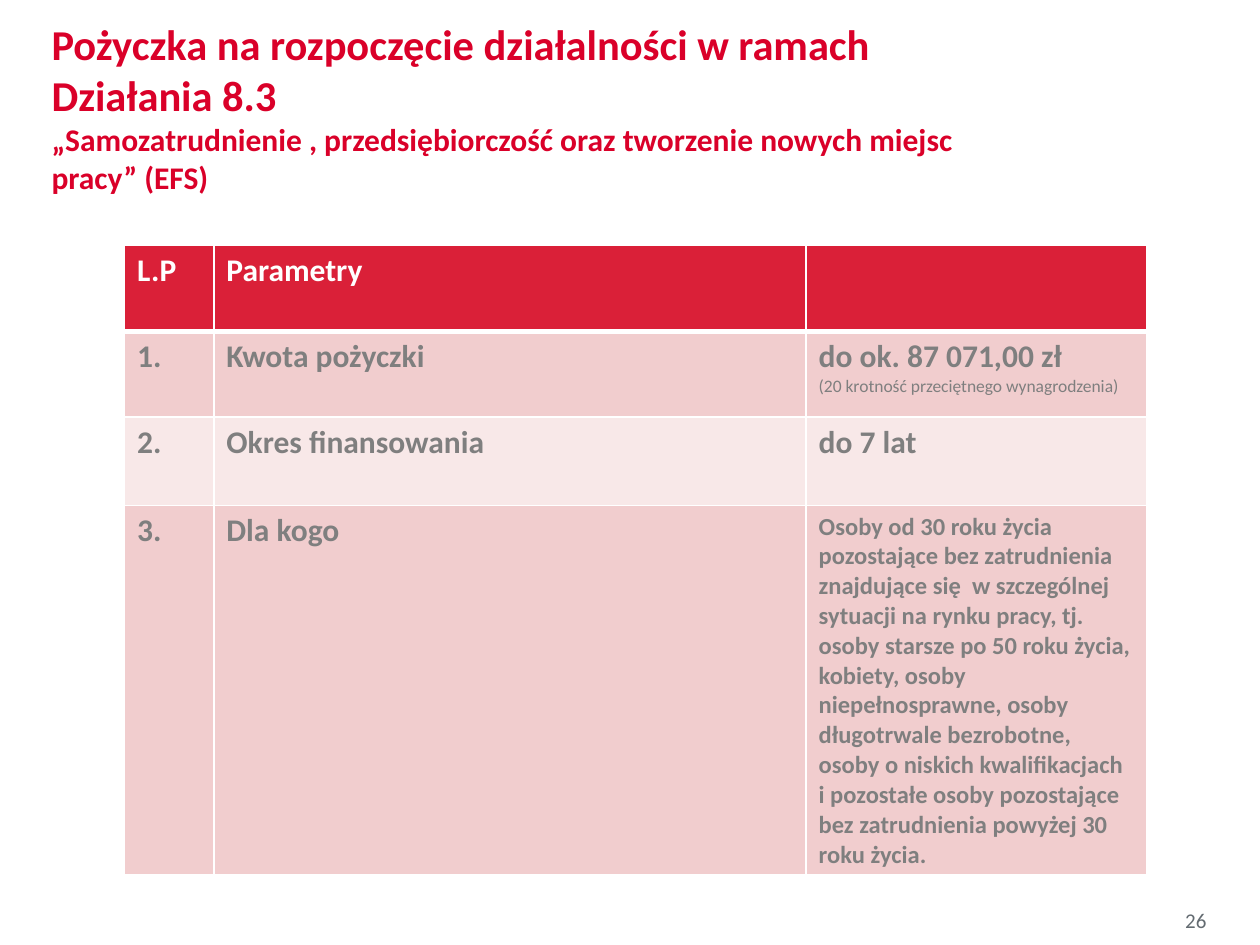
from dataclasses import dataclass

from lxml.etree import SubElement
from pptx import Presentation
from pptx.dml.color import RGBColor
from pptx.enum.text import MSO_VERTICAL_ANCHOR as Anchor, PP_PARAGRAPH_ALIGNMENT as Align
from pptx.oxml.ns import qn
from pptx.util import Cm, Pt


@dataclass(frozen=True)
class Theme:
    font: str = "Calibri"
    title: str = "DA0029"
    header: str = "DA2038"
    band_dark: str = "F1CDCE"
    band_light: str = "F8E8E8"
    white: str = "FFFFFF"
    body: str = "7F7F7F"
    number: str = "636B71"
    title_size: float = 24.3
    text_size: float = 18
    detail_size: float = 14
    number_size: float = 12
    note_size: float = 10


THEME = Theme()

TITLE = ("Pożyczka na rozpoczęcie działalności w ramach Działania 8.3 \v"
         "„Samozatrudnienie , przedsiębiorczość oraz tworzenie nowych miejsc pracy” (EFS)")
AUDIENCE = ("Osoby od 30 roku życia pozostające bez zatrudnienia znajdujące się  w szczególnej "
            "sytuacji na rynku pracy, tj. osoby starsze po 50 roku życia, kobiety, osoby "
            "niepełnosprawne, osoby długotrwale bezrobotne, osoby o niskich kwalifikacjach "
            "i pozostałe osoby pozostające bez zatrudnienia powyżej 30 roku życia.")
ROWS = [
    ("L.P", "Parametry", ""),
    ("1.", "Kwota pożyczki", "do ok. 87 071,00 zł\n(20 krotność przeciętnego wynagrodzenia)"),
    ("2.", "Okres finansowania", "do 7 lat"),
    ("3.", "Dla kogo", AUDIENCE),
]
COLUMN_WIDTHS = (1.8, 11.94, 6.86)
ROW_HEIGHTS = (1.73, 1.73, 1.78, 7.44)


def style_font(font, size, color, bold=False):
    font.name = THEME.font
    font.size = Pt(size)
    font.bold = bold
    font.color.rgb = RGBColor.from_string(color)


def add_text(slide, text, left, top, width, height, sizes, color, bold=False, align=Align.LEFT):
    """Add a one-paragraph text box; sizes holds one size per line."""
    text_frame = slide.shapes.add_textbox(Cm(left), Cm(top), Cm(width), Cm(height)).text_frame
    text_frame.word_wrap = True
    text_frame.vertical_anchor = Anchor.MIDDLE
    paragraph = text_frame.paragraphs[0]
    paragraph.text = text
    paragraph.alignment = align
    for run, size in zip(paragraph.runs, sizes):
        style_font(run.font, size, color, bold)
    return text_frame


def set_borders(cell, bottom=1, top=1):
    properties = cell._tc.get_or_add_tcPr()
    widths = (("a:lnL", 1), ("a:lnR", 1), ("a:lnT", top), ("a:lnB", bottom))
    for position, (tag, width) in enumerate(widths):
        line = SubElement(properties, qn(tag), w=str(Pt(width)))
        fill = SubElement(line, qn("a:solidFill"))
        SubElement(fill, qn("a:srgbClr"), val=THEME.white)
        properties.insert(position, line)


def fill_cell(cell, text, fill, color):
    cell.fill.solid()
    cell.fill.fore_color.rgb = RGBColor.from_string(fill)
    cell.text_frame.text = text
    main, *notes = cell.text_frame.paragraphs
    size = THEME.detail_size if text == AUDIENCE else THEME.text_size
    style_font(main.font, size, color, bold=True)
    for run in main.runs:
        style_font(run.font, size, color, bold=True)
    for paragraph in notes:
        for run in paragraph.runs:
            style_font(run.font, THEME.note_size, color)


def add_parameter_table(slide, left, top):
    frame = slide.shapes.add_table(len(ROWS), len(COLUMN_WIDTHS), Cm(left), Cm(top),
                                   Cm(sum(COLUMN_WIDTHS)), Cm(sum(ROW_HEIGHTS)))
    table = frame.table
    for column, width in zip(table.columns, COLUMN_WIDTHS):
        column.width = Cm(width)
    for index, (row, height, texts) in enumerate(zip(table.rows, ROW_HEIGHTS, ROWS)):
        row.height = Cm(height)
        is_header = index == 0
        band = THEME.band_dark if index % 2 else THEME.band_light
        for cell, text in zip(row.cells, texts):
            fill_cell(cell, text, THEME.header if is_header else band,
                      THEME.white if is_header else THEME.body)
            set_borders(cell, bottom=3 if is_header else 1, top=3 if index == 1 else 1)


def main():
    presentation = Presentation()
    presentation.slide_width, presentation.slide_height = Cm(25.4), Cm(19.05)
    slide = presentation.slides.add_slide(presentation.slide_layouts[6])

    # Page number
    add_text(slide, "26", 19.13, 18.03, 5.44, 1.02, [THEME.number_size], THEME.number,
             align=Align.RIGHT)

    # Title, lifted by a deeper bottom margin
    title = add_text(slide, TITLE, 0.79, 0.74, 19.81, 3.61,
                     [THEME.title_size, THEME.text_size], THEME.title, bold=True)
    title.margin_bottom = Cm(0.89)

    # Loan parameters
    add_parameter_table(slide, 2.51, 4.95)

    presentation.save("out.pptx")


if __name__ == "__main__":
    main()
